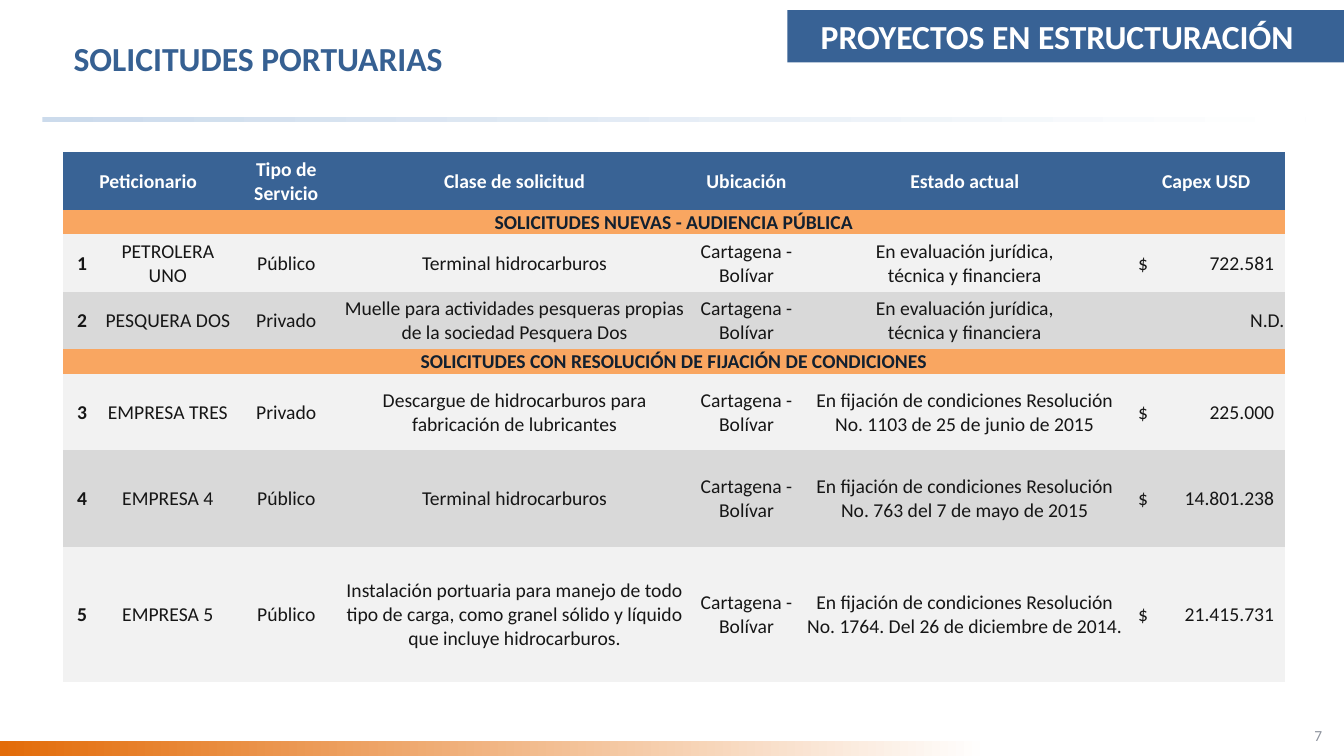
from copy import deepcopy
from dataclasses import dataclass

from lxml.etree import SubElement
from pptx import Presentation
from pptx.dml.color import RGBColor
from pptx.enum.shapes import MSO_SHAPE
from pptx.enum.text import MSO_ANCHOR, MSO_AUTO_SIZE, PP_ALIGN
from pptx.oxml.ns import qn
from pptx.util import Inches, Pt


@dataclass(frozen=True)
class Theme:
    font: str = "Calibri"
    heading: int = 24
    body: int = 14
    small: int = 11
    title: str = "366092"
    banner: str = "386295"
    header: str = "396395"
    section: str = "F9A661"
    section_text: str = "122030"
    light: str = "F2F2F2"
    dark: str = "D9D9D9"
    text: str = "161616"
    muted: str = "8E939E"
    white: str = "FFFFFF"
    rule: str = "CCDBEC"
    orange: str = "E36C09"


THEME = Theme()


def write(frame, text, size=THEME.body, color=THEME.text, bold=False,
          align=PP_ALIGN.CENTER, anchor=MSO_ANCHOR.MIDDLE, tab=None):
    """Fill a text frame with one formatted paragraph; tab is a right tab stop in inches."""
    frame.vertical_anchor = anchor
    paragraph = frame.paragraphs[0]
    paragraph.text = text
    paragraph.alignment = align
    if tab:
        stops = SubElement(paragraph._p.get_or_add_pPr(), qn("a:tabLst"))
        SubElement(stops, qn("a:tab"), pos=str(Inches(tab)), algn="r")
    for run in paragraph.runs:
        run.font.name = THEME.font
        run.font.size = Pt(size)
        run.font.bold = bold
        run.font.color.rgb = RGBColor.from_string(color)
    for line_break in paragraph._p.findall(qn("a:br")):
        line_break.append(deepcopy(paragraph.runs[0]._r.rPr))


def add_block(left, top, width, height, *colors):
    """Add a borderless rectangle with a solid fill or a left-to-right gradient."""
    block = slide.shapes.add_shape(MSO_SHAPE.RECTANGLE, Inches(left), Inches(top),
                                   Inches(width), Inches(height))
    block.shadow.inherit = False
    block.line.fill.background()
    if len(colors) == 1:
        block.fill.solid()
        block.fill.fore_color.rgb = RGBColor.from_string(colors[0])
    else:
        block.fill.gradient()
        block.fill.gradient_angle = 0
        for stop, color in zip(block.fill.gradient_stops, colors):
            stop.color.rgb = RGBColor.from_string(color)
    return block


prs = Presentation()
prs.slide_width, prs.slide_height = Inches(13.33), Inches(7.5)
slide = prs.slides.add_slide(prs.slide_layouts[5])

# Title, rules and page number
title = slide.shapes.title
title.left, title.top = Inches(0.63), Inches(0.33)
title.width, title.height = Inches(12.6), Inches(0.82)
title.text_frame.auto_size = MSO_AUTO_SIZE.NONE
write(title.text_frame, "SOLICITUDES PORTUARIAS", size=THEME.heading, color=THEME.title,
      bold=True, align=PP_ALIGN.LEFT, anchor=MSO_ANCHOR.TOP)

add_block(0.42, 1.16, 12.53, 0.05, THEME.rule, THEME.white)
add_block(0, 7.35, 9.8, 0.15, THEME.orange, THEME.white)

page_number = slide.shapes.add_textbox(Inches(12.82), Inches(7.1), Inches(0.51), Inches(0.4))
page_number.text_frame.word_wrap = True
write(page_number.text_frame, "7", size=THEME.small, color=THEME.muted)

# Table of requests: a one-item row is a section heading
PLACE = "Cartagena - Bolívar"
REVIEW = "En evaluación jurídica,\vtécnica y financiera"
TERMINAL = "Terminal hidrocarburos"
CONDITIONS = "En fijación de condiciones Resolución "
requests = [
    ["Peticionario", "", "Tipo de Servicio", "Clase de solicitud", "Ubicación",
     "Estado actual", "Capex USD"],
    ["SOLICITUDES NUEVAS - AUDIENCIA PÚBLICA"],
    ["1", "PETROLERA UNO", "Público", TERMINAL, PLACE, REVIEW, "$\t722.581"],
    ["2", "PESQUERA DOS", "Privado",
     "Muelle para actividades pesqueras propias de la sociedad Pesquera Dos",
     PLACE, REVIEW, "N.D."],
    ["SOLICITUDES CON RESOLUCIÓN DE FIJACIÓN DE CONDICIONES"],
    ["3", "EMPRESA TRES", "Privado",
     "Descargue de hidrocarburos para fabricación de lubricantes",
     PLACE, CONDITIONS + "No. 1103 de 25 de junio de 2015", "$\t225.000"],
    ["4", "EMPRESA 4", "Público", TERMINAL, PLACE,
     CONDITIONS + "No. 763 del 7 de mayo de 2015", "$\t14.801.238"],
    ["5", "EMPRESA 5", "Público",
     "Instalación portuaria para manejo de todo tipo de carga, como granel sólido "
     "y líquido que incluye hidrocarburos.",
     PLACE, CONDITIONS + "No. 1764. Del 26 de diciembre de 2014.", "$\t21.415.731"],
]
column_widths = [0.39, 1.31, 1.04, 3.49, 1.11, 3.22, 1.57]
row_heights = [0.57, 0.24, 0.57, 0.57, 0.24, 0.76, 0.96, 1.34]
NO_STYLE_NO_GRID = "{2D5ABB26-0587-4C30-8999-92F81FD0307C}"

table = slide.shapes.add_table(len(row_heights), len(column_widths), Inches(0.62), Inches(1.51),
                               Inches(sum(column_widths)), Inches(sum(row_heights))).table
table.horz_banding = False
table._tbl.tblPr.find(qn("a:tableStyleId")).text = NO_STYLE_NO_GRID
for column, width in zip(table.columns, column_widths):
    column.width = Inches(width)

request_count = 0
for r, (request, height) in enumerate(zip(requests, row_heights)):
    table.rows[r].height = Inches(height)
    is_header, is_section = r == 0, len(request) == 1
    if is_header:
        fill, color = THEME.header, THEME.white
        table.cell(r, 0).merge(table.cell(r, 1))
    elif is_section:
        fill, color = THEME.section, THEME.section_text
        table.cell(r, 0).merge(table.cell(r, len(column_widths) - 1))
    else:
        fill, color = (THEME.light, THEME.dark)[request_count % 2], THEME.text
        request_count += 1
    for c, text in enumerate(request):
        cell = table.cell(r, c)
        cell.fill.solid()
        cell.fill.fore_color.rgb = RGBColor.from_string(fill)
        cell.vertical_anchor = MSO_ANCHOR.MIDDLE
        is_amount = "\t" in text
        cell.margin_left = Inches(0.11 if is_amount else 0.01)
        cell.margin_right = cell.margin_top = Inches(0.01)
        cell.margin_bottom = 0
        if is_amount:
            align = PP_ALIGN.LEFT
        else:
            align = PP_ALIGN.RIGHT if text == "N.D." else PP_ALIGN.CENTER
        if text:
            write(cell.text_frame, text, color=color, align=align, anchor=None,
                  bold=is_header or is_section or c == 0, tab=1.35 if is_amount else None)

# Section banner
banner = add_block(7.81, 0.1, 5.52, 0.52, THEME.banner)
banner.text_frame.margin_left = Inches(0.33)
write(banner.text_frame, "PROYECTOS EN ESTRUCTURACIÓN", size=THEME.heading,
      color=THEME.white, bold=True, align=PP_ALIGN.LEFT)

prs.save("out.pptx")
